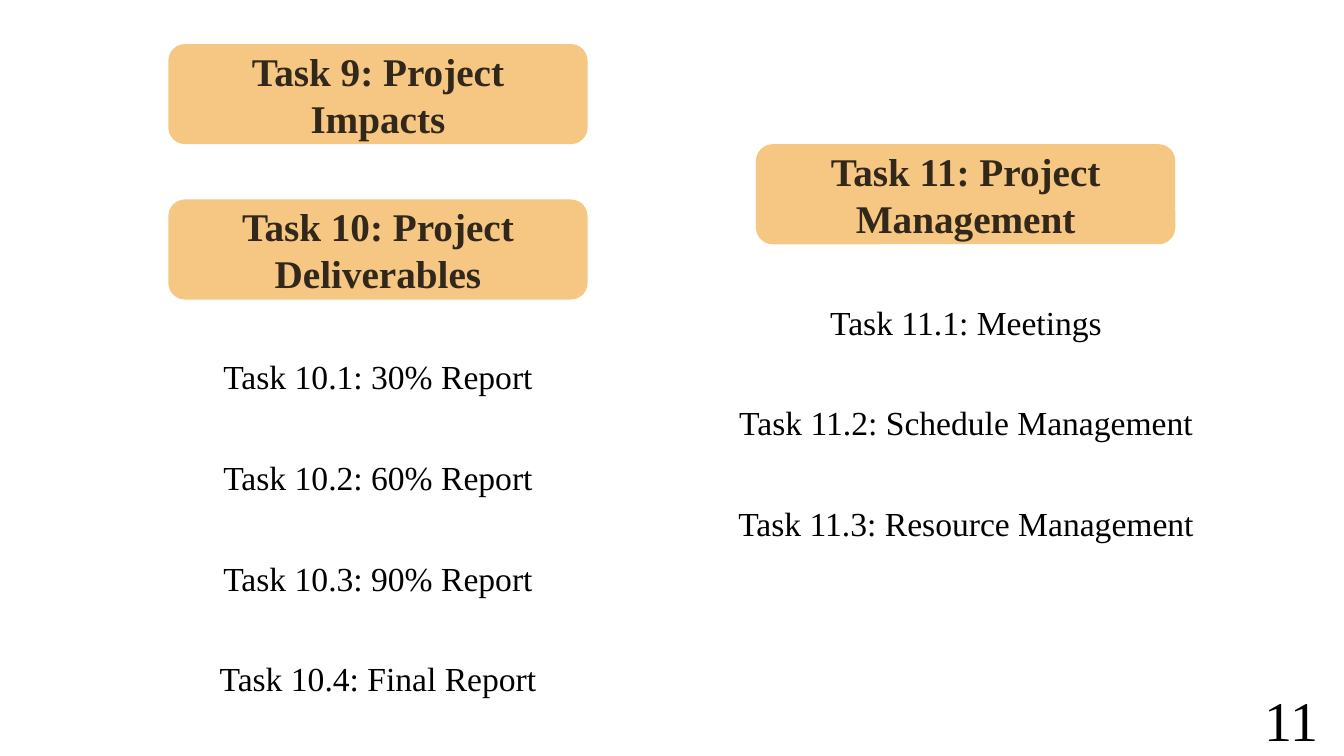
"""Build the slide listing project tasks 9 to 11 and their subtasks."""
from dataclasses import dataclass

from lxml import etree
from pptx import Presentation
from pptx.dml.color import RGBColor
from pptx.enum.shapes import MSO_SHAPE
from pptx.enum.text import MSO_ANCHOR, PP_ALIGN
from pptx.oxml.ns import qn
from pptx.slide import Slide
from pptx.text.text import TextFrame
from pptx.util import Pt

ROUNDED = MSO_SHAPE.ROUNDED_RECTANGLE
MIDDLE, TOP = MSO_ANCHOR.MIDDLE, MSO_ANCHOR.TOP
CENTER, RIGHT = PP_ALIGN.CENTER, PP_ALIGN.RIGHT


@dataclass(frozen=True)
class Theme:
    font: str = "Times New Roman"
    ink: RGBColor = RGBColor(0x00, 0x00, 0x00)
    banner: RGBColor = RGBColor(0xF6, 0xC7, 0x82)
    heading_opacity: int = 80
    heading_size: int = 28
    subtask_size: int = 24
    number_size: int = 40


@dataclass(frozen=True)
class Heading:
    text: str
    left: float
    top: float


@dataclass(frozen=True)
class TextBlock:
    lines: tuple[str, ...]
    left: float
    top: float
    width: float
    height: float
    size: int
    anchor: MSO_ANCHOR
    paragraph_format: dict


THEME = Theme()
PAGE_WIDTH, PAGE_HEIGHT = 960, 540
HEADING_WIDTH, HEADING_HEIGHT = 299.5, 71.5
LEFT_HEADING, RIGHT_HEADING = 120.25, 540
LIST_WIDTH = 408

HEADINGS = (
    Heading("Task 10: Project Deliverables", LEFT_HEADING, 142.5),
    Heading("Task 9: Project Impacts", LEFT_HEADING, 31.5),
    Heading("Task 11: Project Management", RIGHT_HEADING, 103),
)

HEADING_FORMAT = {"alignment": CENTER}
NUMBER_FORMAT = {"alignment": RIGHT}
SUBTASK_FORMAT = {
    "alignment": CENTER,
    "line_spacing": 0.9,
    "space_before": Pt(10),
    "space_after": Pt(36),
}

DELIVERABLES = (
    "Task 10.1: 30% Report",
    "Task 10.2: 60% Report",
    "Task 10.3: 90% Report",
    "Task 10.4: Final Report",
)
MANAGEMENT = (
    "Task 11.1: Meetings",
    "Task 11.2: Schedule Management",
    "Task 11.3: Resource Management",
)

TEXT_BLOCKS = (
    TextBlock(DELIVERABLES, 66, 254.25, LIST_WIDTH, 262,
              THEME.subtask_size, TOP, SUBTASK_FORMAT),
    TextBlock(MANAGEMENT, 486, 215, LIST_WIDTH, 184.5,
              THEME.subtask_size, TOP, SUBTASK_FORMAT),
    TextBlock(("11",), 877.5, 499.5, 71.5, 29,
              THEME.number_size, MIDDLE, NUMBER_FORMAT),
)


def write_lines(frame: TextFrame, lines: tuple[str, ...], size: int,
                anchor: MSO_ANCHOR, paragraph_format: dict,
                bold: bool = False) -> None:
    """Fill a text frame with one formatted paragraph per line."""
    frame.word_wrap = True
    frame.vertical_anchor = anchor
    font_format = {"name": THEME.font, "size": Pt(size), "bold": bold}
    for index, line in enumerate(lines):
        para = frame.add_paragraph() if index else frame.paragraphs[0]
        for name, value in paragraph_format.items():
            setattr(para, name, value)
        span = para.add_run()
        span.text = line
        for name, value in font_format.items():
            setattr(span.font, name, value)
        span.font.color.rgb = THEME.ink


def add_heading(page: Slide, heading: Heading) -> None:
    """Draw a rounded banner with a slightly translucent bold title."""
    box = page.shapes.add_shape(
        ROUNDED, Pt(heading.left), Pt(heading.top),
        Pt(HEADING_WIDTH), Pt(HEADING_HEIGHT))
    box.shadow.inherit = False
    box.fill.solid()
    box.fill.fore_color.rgb = THEME.banner
    box.line.fill.background()
    write_lines(box.text_frame, (heading.text,), THEME.heading_size,
                MIDDLE, HEADING_FORMAT, bold=True)
    for color in box.text_frame._txBody.iter(qn("a:srgbClr")):
        alpha = etree.SubElement(color, qn("a:alpha"))
        alpha.set("val", str(THEME.heading_opacity * 1000))


def add_text_block(page: Slide, block: TextBlock) -> None:
    """Draw a plain text box holding the lines of a block."""
    box = page.shapes.add_textbox(
        Pt(block.left), Pt(block.top), Pt(block.width), Pt(block.height))
    write_lines(box.text_frame, block.lines, block.size,
                block.anchor, block.paragraph_format)


def main() -> None:
    """Create the deck and save it."""
    deck = Presentation()
    deck.slide_width, deck.slide_height = Pt(PAGE_WIDTH), Pt(PAGE_HEIGHT)
    page = deck.slides.add_slide(deck.slide_layouts[6])
    for heading in HEADINGS:
        add_heading(page, heading)
    for block in TEXT_BLOCKS:
        add_text_block(page, block)
    deck.save("out.pptx")


if __name__ == "__main__":
    main()
